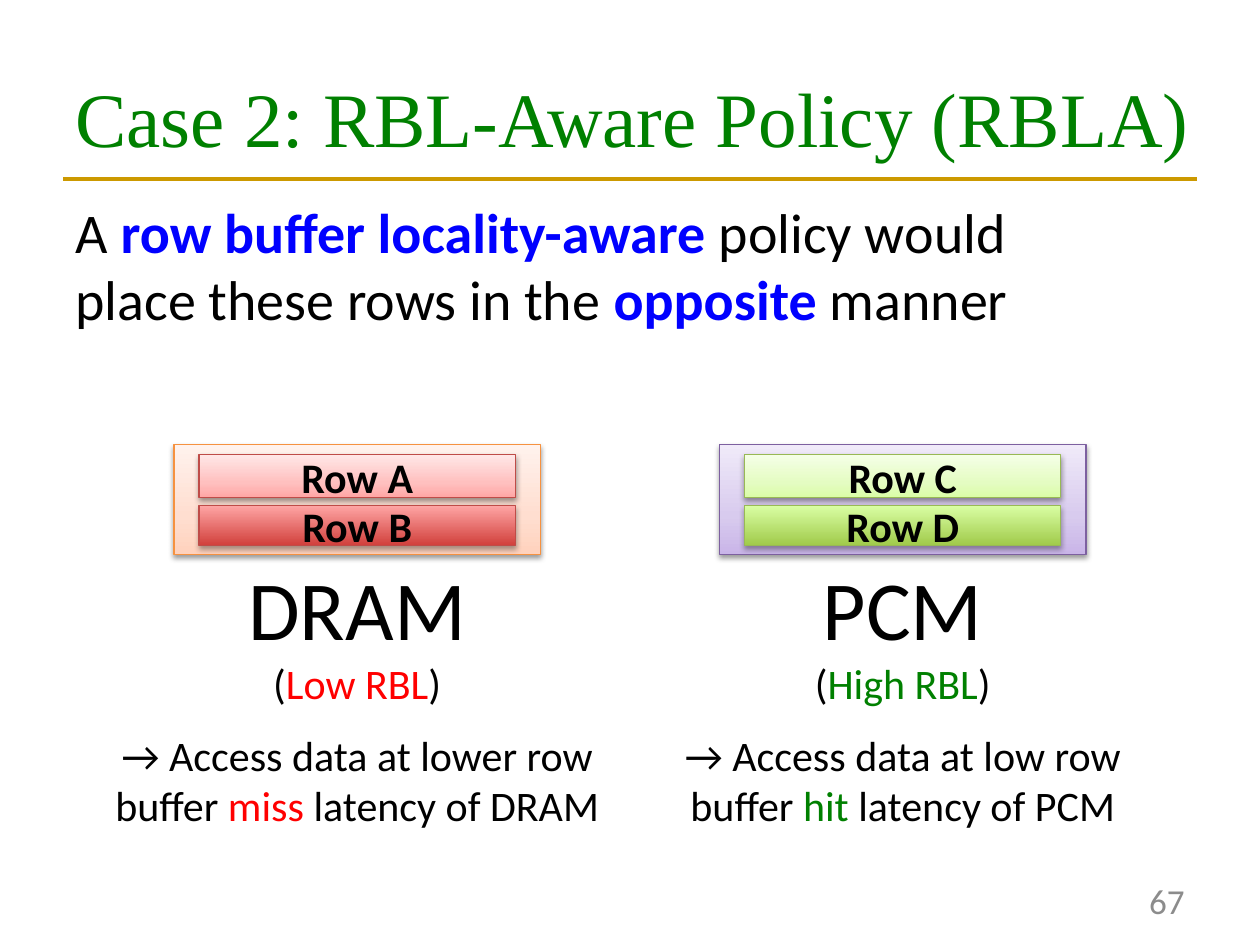
from dataclasses import dataclass

from pptx import Presentation
from pptx.dml import color as dml
from pptx.enum import shapes, text
from pptx.oxml import parse_xml
from pptx.oxml import ns
from pptx.util import Inches, Pt


@dataclass(frozen=True)
class Theme:
    body_font: str = "Calibri"
    title_font: str = "Times New Roman"
    black: str = "000000"
    blue: str = "0000FF"
    red: str = "FF0000"
    green: str = "008000"
    grey: str = "8C8C8C"
    gold: str = "CC9900"
    title_size: int = 44
    name_size: int = 48
    lead_size: int = 32
    body_size: int = 24
    number_size: int = 20


@dataclass(frozen=True)
class Style:
    stops: tuple
    outline: str
    shadow_alpha: int = 38
    shadow_distance: float = 1.6


@dataclass(frozen=True)
class Memory:
    name: str
    locality: str
    accent: str
    note: tuple
    note_width: float
    case: Style
    rows: tuple


THEME = Theme()
LEFT, CENTER, RIGHT = (text.PP_ALIGN.LEFT, text.PP_ALIGN.CENTER, text.PP_ALIGN.RIGHT)

DRAM = Memory(
    "DRAM", "Low RBL", THEME.red,
    ("→ Access data at lower row buffer ", "miss", " latency of DRAM"), 4.35,
    Style(((0, "FFD2BD"), (35, "FFDED0"), (100, "FFF2ED")), "F69240"),
    (("Row A", Style(((0, "FFA6A5"), (35, "FFC0BF"), (100, "FFE7E7")), "BF4C48")),
     ("Row B", Style(((0, "D1403C"), (100, "FFA6A5")), "BF4C48", 35, 1.8))),
)
PCM = Memory(
    "PCM", "High RBL", THEME.green,
    ("→ Access data at low row buffer ", "hit", " latency of PCM"), 4.03,
    Style(((0, "C9B5E8"), (35, "D8CBEE"), (100, "F0EAF9")), "7D60A0"),
    (("Row C", Style(((0, "DAFDA7"), (35, "E4FCC2"), (100, "F5FFE7")), "98B955")),
     ("Row D", Style(((0, "A0CA4A"), (100, "DAFFA5")), "98B955", 35, 1.8))),
)


def rgb(value):
    return dml.RGBColor.from_string(value)


def format_font(font, size, color, bold=False, name=THEME.body_font):
    font.name, font.size, font.bold = name, Pt(size), bold
    font.color.rgb = rgb(color)


def write_lines(paragraph, lines, align):
    paragraph.alignment = align
    for index, (size, pieces) in enumerate(lines):
        if index:
            paragraph.add_line_break()
        for content, color, bold in pieces:
            run = paragraph.add_run()
            run.text = content
            format_font(run.font, size, color, bold)


def add_text(slide, box, lines, align=LEFT, wrap=False, anchor=text.MSO_ANCHOR.TOP):
    shape = slide.shapes.add_textbox(*map(Inches, box))
    frame = shape.text_frame
    frame.word_wrap, frame.vertical_anchor = wrap, anchor
    write_lines(frame.paragraphs[0], lines, align)


def add_block(slide, box, style, label=None):
    shape = slide.shapes.add_shape(shapes.MSO_SHAPE.RECTANGLE, *map(Inches, box))
    shape.line.color.rgb = rgb(style.outline)
    shape.line.width = Pt(0.75)
    shape.fill.gradient()
    shape.fill.gradient_angle = 90
    properties = shape._element.spPr
    stop_list = properties.find(".//" + ns.qn("a:gsLst"))
    for stop in list(stop_list):
        stop_list.remove(stop)
    for position, color in style.stops:
        stop_list.append(parse_xml(
            f'<a:gs {ns.nsdecls("a")} pos="{position * 1000}"><a:srgbClr val="{color}"/></a:gs>'))
    shape.shadow.inherit = False
    properties.find(ns.qn("a:effectLst")).append(parse_xml(
        f'<a:outerShdw {ns.nsdecls("a")} blurRad="{Pt(3.1)}" dist="{Pt(style.shadow_distance)}" '
        f'dir="5400000" rotWithShape="0"><a:srgbClr val="{THEME.black}">'
        f'<a:alpha val="{style.shadow_alpha * 1000}"/></a:srgbClr></a:outerShdw>'))
    if label:
        frame = shape.text_frame
        frame.text = label
        frame.vertical_anchor = text.MSO_ANCHOR.MIDDLE
        paragraph = frame.paragraphs[0]
        paragraph.alignment = CENTER
        format_font(paragraph.runs[0].font, THEME.body_size, THEME.black, True)


def add_title(slide, box):
    title = slide.shapes.title
    title.left, title.top, title.width, title.height = map(Inches, box)
    frame = title.text_frame
    frame.text = "Case 2: RBL-Aware Policy (RBLA)"
    frame.auto_size = text.MSO_AUTO_SIZE.NONE
    frame.vertical_anchor = text.MSO_ANCHOR.MIDDLE
    paragraph = frame.paragraphs[0]
    paragraph.alignment = LEFT
    format_font(paragraph.runs[0].font, THEME.title_size, THEME.green, name=THEME.title_font)


def add_rule(slide, left, right, top):
    rule = slide.shapes.add_connector(
        shapes.MSO_CONNECTOR.STRAIGHT, *map(Inches, (left, top, right, top)))
    rule.line.color.rgb = rgb(THEME.gold)
    rule.line.width = Pt(2.25)
    rule._element.spPr.append(parse_xml(f'<a:effectLst {ns.nsdecls("a")}/>'))


def add_lead(slide, box):
    add_text(slide, box, [
        (THEME.lead_size, [("A ", THEME.black, False),
                           ("row buffer locality-aware ", THEME.blue, True),
                           ("policy would", THEME.black, False)]),
        (THEME.lead_size, [("place these rows in the ", THEME.black, False),
                           ("opposite ", THEME.blue, True),
                           ("manner", THEME.black, False)]),
    ])


def add_memory(slide, box, memory):
    left, top, width, height = box
    center = left + width / 2
    add_text(slide, (center - 1, top + 0.84, 2, 1.31), [
        (THEME.name_size, [(memory.name, THEME.black, False)]),
        (THEME.body_size, [("(", THEME.black, False),
                           (memory.locality, memory.accent, False),
                           (")", THEME.black, False)]),
    ], CENTER)
    before, word, after = memory.note
    add_text(slide, (center - memory.note_width / 2, top + 2.21, memory.note_width, 0.91), [
        (THEME.body_size, [(before, THEME.black, False), (word, memory.accent, False),
                           (after, THEME.black, False)]),
    ], CENTER, wrap=True)
    add_block(slide, box, memory.case)
    for (label, style), offset, row_height in zip(memory.rows, (0.08, 0.48), (0.34, 0.32)):
        add_block(slide, (left + 0.2, top + offset, width - 0.4, row_height), style, label)


def add_number(slide, box):
    add_text(slide, box, [(THEME.number_size, [("67", THEME.grey, False)])],
             RIGHT, wrap=True, anchor=text.MSO_ANCHOR.MIDDLE)


def main():
    presentation = Presentation()
    presentation.slide_width, presentation.slide_height = Inches(10), Inches(7.5)
    slide = presentation.slides.add_slide(presentation.slide_layouts[5])
    add_rule(slide, 0.5, 9.5, 1.42)
    add_title(slide, (0.5, 0.3, 9.5, 1.25))
    add_number(slide, (7.17, 6.95, 2.33, 0.4))
    add_lead(slide, (0.5, 1.52, 7.72, 1.18))
    for left, memory in ((1.38, DRAM), (5.71, PCM)):
        add_memory(slide, (left, 3.53, 2.91, 0.87), memory)
    presentation.save("out.pptx")


if __name__ == "__main__":
    main()
